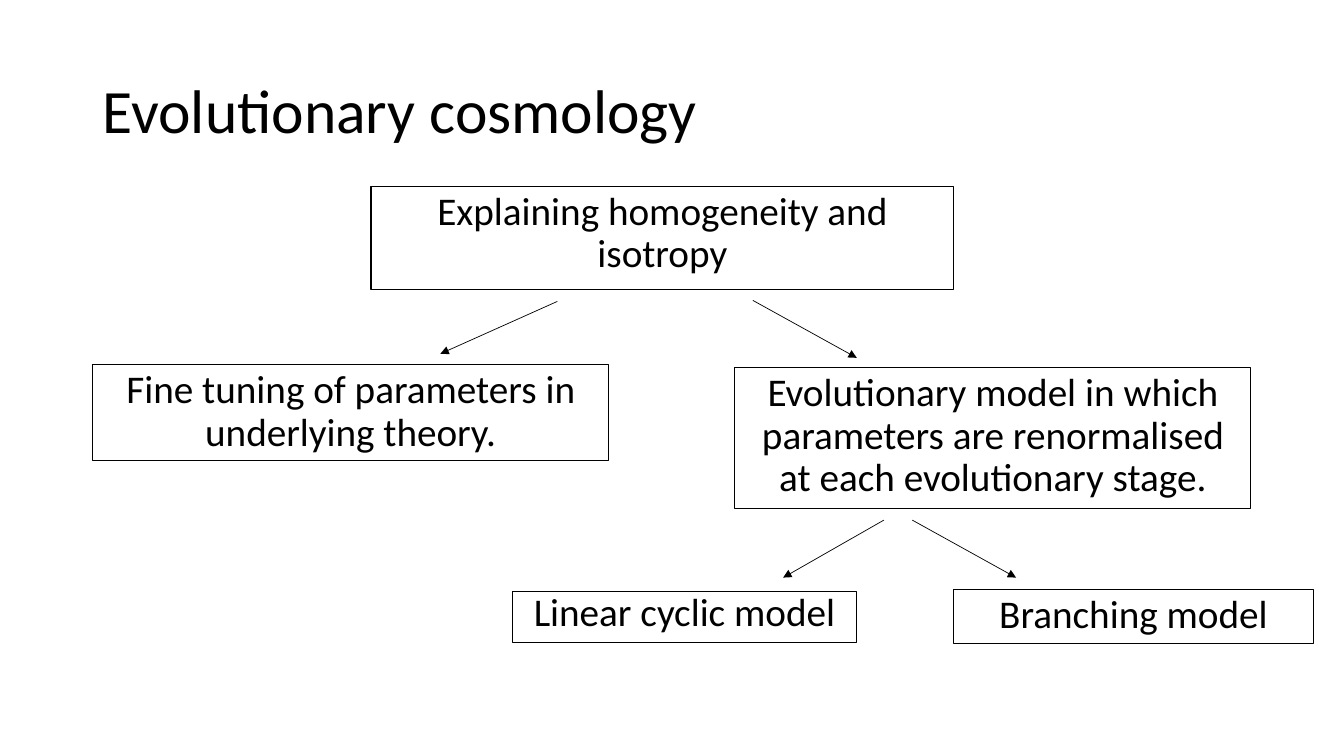
"""Build the evolutionary cosmology slide: a title above a branching diagram."""
from lxml import etree
from pptx import Presentation
from pptx.dml.color import RGBColor
from pptx.enum import shapes, text
from pptx.oxml import ns
from pptx.util import Pt

BLACK = RGBColor(0, 0, 0)
FONT = "Calibri"
TITLE_BOX = (66.2, 28.8, 828, 104.4)
QUESTION_BOX = (265, 133.2, 416.2, 73.4)
FINE_TUNING_BOX = (66.2, 260.6, 368.6, 68.4)
EVOLUTIONARY_BOX = (524.9, 262.8, 368.6, 100.8)
LINEAR_BOX = (365.8, 422.6, 246.2, 36.7)
BRANCHING_BOX = (681.1, 421.2, 257, 38.2)
QUESTION_ARROWS = [((-75, 8.7), (-158.5, 46.1)), ((64.7, 8), (138.9, 49))]
MODEL_ARROWS = [((-77.8, 7.9), (-149.8, 49)), ((-57.6, 7.9), (16.6, 49))]


def apply_format(target, values):
    """Set each named attribute on the target."""
    for name, value in values.items():
        setattr(target, name, value)


def write_text(shape, words, size, frame_format, paragraph_format):
    """Fill a shape with one formatted paragraph."""
    frame = shape.text_frame
    apply_format(frame, {"word_wrap": True, **frame_format})
    paragraph = frame.paragraphs[0]
    apply_format(paragraph, paragraph_format)
    run = paragraph.add_run()
    run.text = words
    apply_format(run.font, {"size": Pt(size), "name": FONT})
    run.font.color.rgb = BLACK


def add_title(slide, box, words):
    """Place the slide title, centred vertically in its box."""
    shape = slide.shapes.add_textbox(*map(Pt, box))
    write_text(shape, words, 44, {"vertical_anchor": text.MSO_ANCHOR.MIDDLE},
               {"line_spacing": 0.9, "alignment": text.PP_ALIGN.LEFT})


def add_arrow(slide, start, end):
    """Draw a thin line that ends in a triangular head."""
    arrow = slide.shapes.add_connector(
        shapes.MSO_CONNECTOR.STRAIGHT, *map(Pt, (*start, *end)))
    arrow.line.color.rgb = BLACK
    arrow.line.width = Pt(0.5)
    head = etree.SubElement(arrow.line._get_or_add_ln(), ns.qn("a:tailEnd"))
    head.set("type", "triangle")
    etree.SubElement(arrow._element.spPr, ns.qn("a:effectLst"))


def add_node(slide, box, words, spacing=0.9, arrows=()):
    """Place an outlined box and its arrows, offset from its bottom centre."""
    left, top, width, height = box
    shape = slide.shapes.add_shape(shapes.MSO_SHAPE.RECTANGLE, *map(Pt, box))
    shape.shadow.inherit = False
    shape.fill.background()
    shape.line.color.rgb = BLACK
    shape.line.width = Pt(0.75)
    write_text(shape, words, 28, {"vertical_anchor": text.MSO_ANCHOR.TOP},
               {"line_spacing": spacing, "space_before": Pt(10),
                "alignment": text.PP_ALIGN.CENTER})
    centre, bottom = left + width / 2, top + height
    for ends in arrows:
        add_arrow(slide, *[(centre + x, bottom + y) for x, y in ends])


def main():
    """Assemble and save the presentation."""
    presentation = Presentation()
    apply_format(presentation, {"slide_width": Pt(960), "slide_height": Pt(540)})
    slide = presentation.slides.add_slide(presentation.slide_layouts[6])
    add_title(slide, TITLE_BOX, "Evolutionary cosmology")
    add_node(slide, QUESTION_BOX, "Explaining homogeneity and isotropy",
             arrows=QUESTION_ARROWS)
    add_node(slide, FINE_TUNING_BOX,
             "Fine tuning of parameters in underlying theory.")
    add_node(slide, EVOLUTIONARY_BOX,
             "Evolutionary model in which parameters are renormalised "
             "at each evolutionary stage.", arrows=MODEL_ARROWS)
    add_node(slide, LINEAR_BOX, "Linear cyclic model", spacing=0.8)
    add_node(slide, BRANCHING_BOX, "Branching model")
    presentation.save("out.pptx")


if __name__ == "__main__":
    main()
